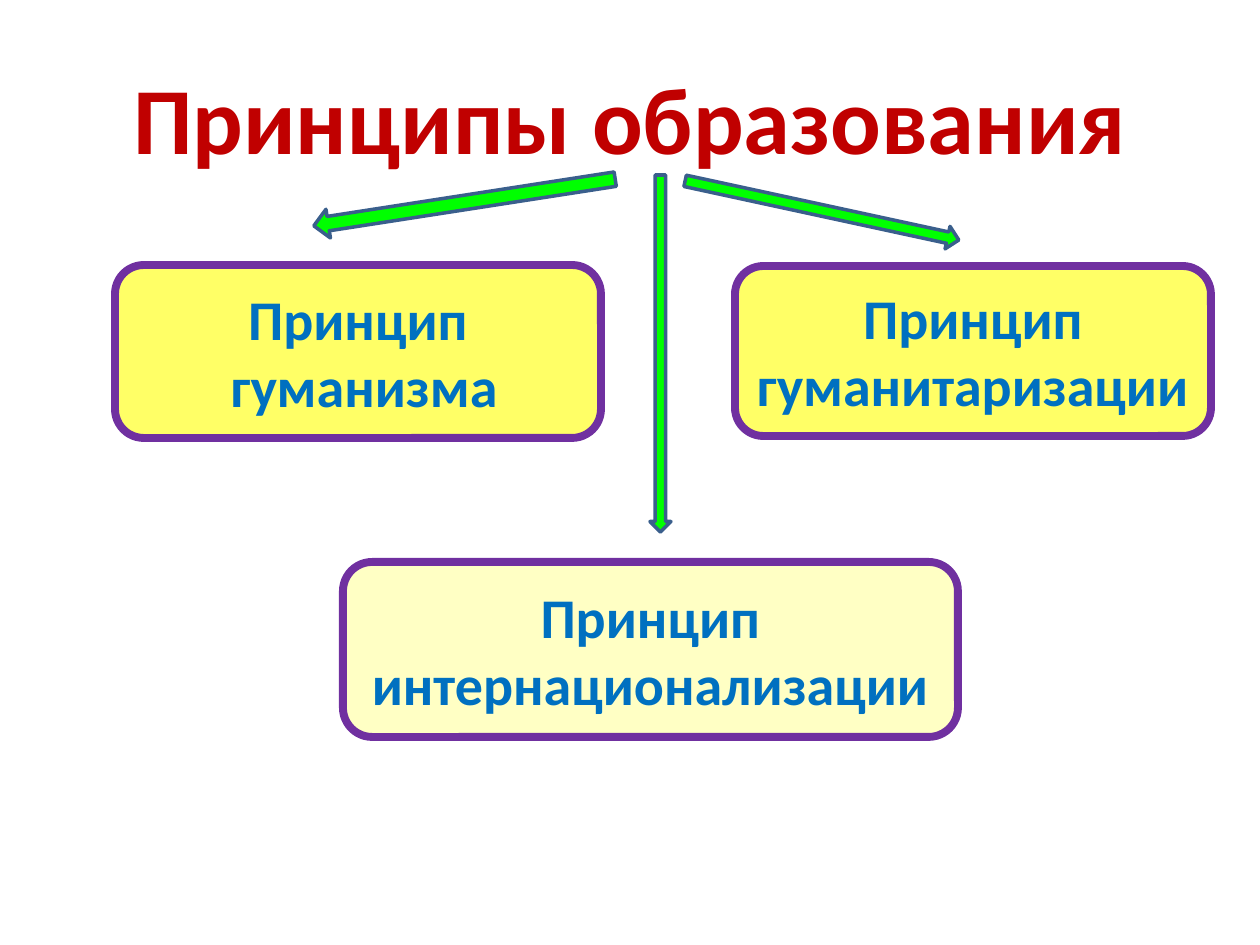
from lxml.etree import SubElement
from pptx import Presentation
from pptx.dml.color import RGBColor
from pptx.enum.shapes import MSO_SHAPE as Shape
from pptx.enum.text import MSO_ANCHOR as Anchor, PP_ALIGN as Align
from pptx.oxml.ns import qn
from pptx.util import Emu, Pt

EMU_PER_PX = 914400 / 126
DARK_RED, BLUE, PURPLE = "C00000", "0070C0", "7030A0"
YELLOW, PURE_YELLOW = "FFFF66", "FFFF00"
GREEN, STEEL = "00FF00", "3A5F8C"


def px(*lengths):
    return [Emu(round(length * EMU_PER_PX)) for length in lengths]


def color(hex_code):
    return RGBColor.from_string(hex_code)


def write(frame, text, *, size, hue, bold=True, font="Calibri"):
    """Fill a frame with centred text, one paragraph per line."""
    frame.word_wrap = True
    frame.vertical_anchor = Anchor.MIDDLE
    for index, line in enumerate(text.split("\n")):
        paragraph = frame.paragraphs[0] if index == 0 else frame.add_paragraph()
        paragraph.alignment = Align.CENTER
        run = paragraph.add_run()
        run.text = line
        run.font.name, run.font.size, run.font.bold = font, Pt(size), bold
        run.font.color.rgb = color(hue)


def add_figure(slide, kind, box, *, fill, line, weight, opacity=100):
    figure = slide.shapes.add_shape(kind, *px(*box))
    figure.shadow.inherit = False
    figure.fill.solid()
    figure.fill.fore_color.rgb = color(fill)
    figure.line.color.rgb = color(line)
    figure.line.width = Pt(weight)
    if opacity < 100:
        tint = figure.fill._xPr.find(qn("a:solidFill"))[0]
        SubElement(tint, qn("a:alpha"), val=str(opacity * 1000))
    return figure


def add_title(slide, box):
    title = slide.shapes.add_textbox(*px(*box))
    write(title.text_frame, "Принципы образования", size=54, hue=DARK_RED)


def add_principles(slide, box):
    """Place the three principles and the arrows leading to them."""
    left, top, _, _ = box

    def within(x, y, width, height):
        return left + x, top + y, width, height

    # Principle cards
    cards = [
        ("Принцип гуманитаризации", (620, 91, 476, 170), YELLOW, 100),
        ("Принцип интернационализации", (228, 387, 615, 175), PURE_YELLOW, 23),
        ("Принцип\n гуманизма", (0, 90, 486, 173), YELLOW, 100),
    ]
    for text, place, fill, opacity in cards:
        card = add_figure(slide, Shape.ROUNDED_RECTANGLE, within(*place),
                          fill=fill, line=PURPLE, weight=4.5, opacity=opacity)
        write(card.text_frame, text, size=32, hue=BLUE)

    # Block arrows from the title
    arrows = [
        (Shape.DOWN_ARROW, (535, 0, 21, 357), 0),
        (Shape.DOWN_ARROW, (335, -125, 29, 305), 81.2),
        (Shape.RIGHT_ARROW, (567, 24, 280, 23), 12.2),
    ]
    for kind, place, angle in arrows:
        arrow = add_figure(slide, kind, within(*place),
                           fill=GREEN, line=STEEL, weight=2)
        arrow.rotation = angle


def main():
    deck = Presentation()
    deck.slide_width, deck.slide_height = px(1260, 945)
    slide = deck.slides.add_slide(deck.slide_layouts[6])
    add_title(slide, (63, 38, 1134, 158))
    add_principles(slide, (115, 175, 1096, 562))
    deck.save("out.pptx")


if __name__ == "__main__":
    main()
